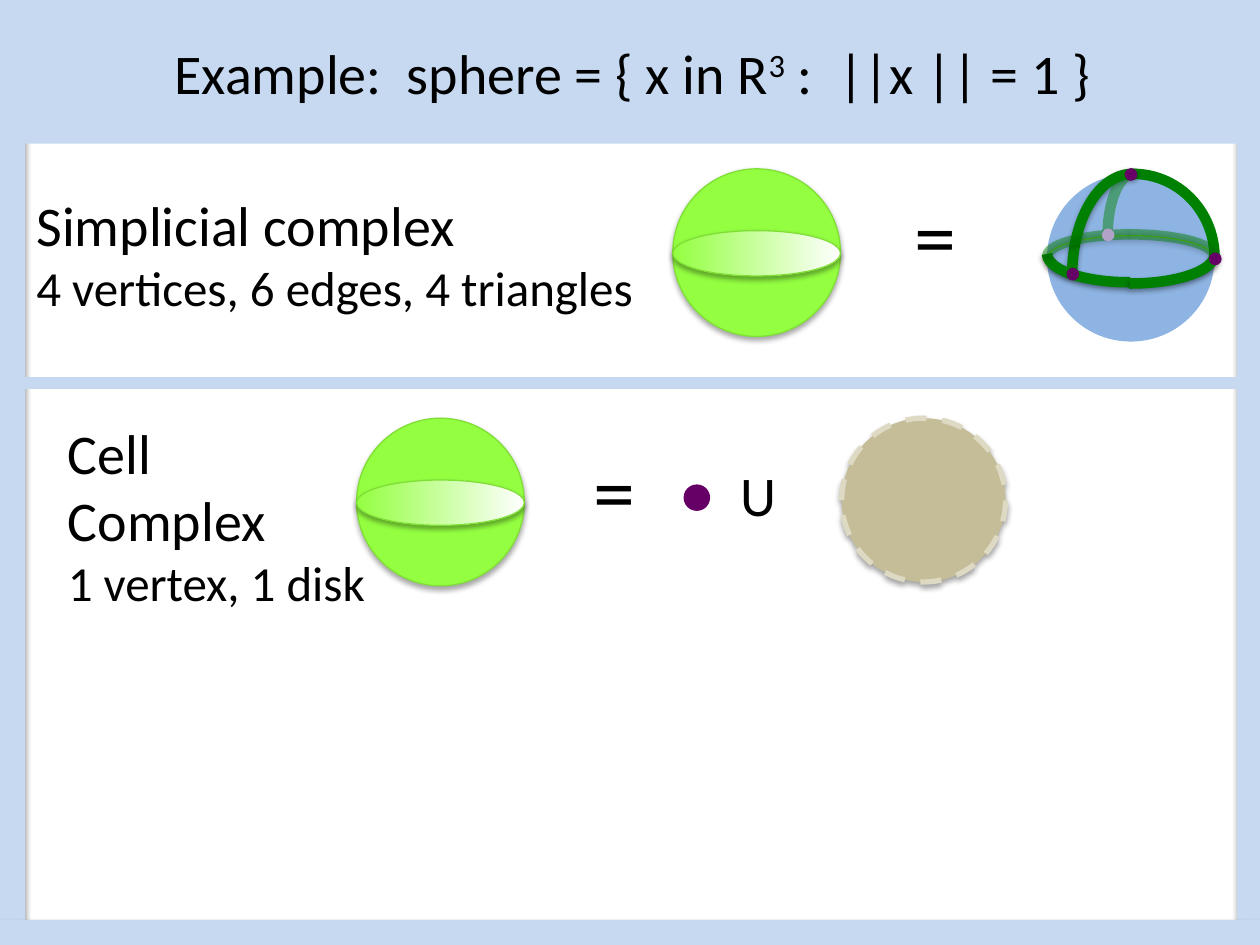
from dataclasses import dataclass

from lxml.etree import SubElement
from pptx import Presentation
from pptx.dml.color import RGBColor
from pptx.enum.dml import MSO_LINE_DASH_STYLE as Dash
from pptx.enum.shapes import MSO_CONNECTOR as Connector, MSO_SHAPE as Preset
from pptx.enum.text import MSO_ANCHOR as Anchor, MSO_AUTO_SIZE as AutoSize, PP_ALIGN as Align
from pptx.oxml.ns import qn
from pptx.util import Pt

COLORS = {
    "frame": "C6D9F1", "text": "000000", "sphere": "94FF41", "rim": "80DF36",
    "white": "FFFFFF", "ball": "8EB4E3", "edge": "008000", "vertex": "660066",
    "hidden_vertex": "B3A2C7", "disk": "C4BD97", "disk_rim": "DDD9C3",
}
SPHERE = 95.8
BAND_TOP, BAND_HEIGHT = 35.3, 25.9
VERTEX = 6.5
QUARTER_START = 160.518  # arc start just before the top, ending at the right


@dataclass(frozen=True)
class Box:
    left: float
    top: float
    width: float
    height: float


@dataclass(frozen=True)
class Edge:
    box: Box
    flip: str = ""
    rotation: int = 0
    hidden: bool = False
    shadow: int = 0


@dataclass(frozen=True)
class Vertex:
    left: float
    top: float
    color: str = "vertex"
    size: float = VERTEX


@dataclass(frozen=True)
class Label:
    box: Box
    lines: tuple[tuple[str, int], ...]


FRAME = (
    (Box(0, 0, 14.4, 540), 35), (Box(707, 0, 14.4, 540), 35),
    (Box(1.4, 0, 720.7, 14.4), 0), (Box(-0.7, 525.6, 720.7, 14.4), 35),
)
EDGES = (
    Edge(Box(601.2, 99.4, 92.9, SPHERE)),
    Edge(Box(612.7, 99.4, 68.4, 115.2), "h", shadow=38),
    Edge(Box(632.9, 99.4, 29.5, 71.3), "h", hidden=True),
    Edge(Box(598.3, 128.9, 93.6, 32.4), "", 180, shadow=38),
    Edge(Box(598.3, 128.9, SPHERE, 33.1), "h", 180, shadow=38),
    Edge(Box(598.3, 133.9, 93.6, 25.2), "v", 180, True, 38),
    Edge(Box(598.3, 133.9, SPHERE, 25.2), "hv", 180, True, 38),
)
VERTICES = (
    Vertex(643, 96.5), Vertex(630, 131, "hidden_vertex"),
    Vertex(609.8, 153.4), Vertex(691.2, 144.7),
)
LABELS = (
    Label(Box(13.7, 105.1, 363.6, 79.9),
          (("Simplicial complex", 32), ("4 vertices, 6 edges, 4 triangles", 28))),
    Label(Box(31.7, 235.4, 255.6, 118.8),
          (("Cell", 32), ("Complex", 32), ("1 vertex, 1 disk", 28))),
    Label(Box(515.5, 101.5, 43.2, 65.5), (("=", 48),)),
    Label(Box(416.2, 259.9, 226.1, 46.1), (("U", 32),)),
    Label(Box(331.9, 247, 88.6, 65.5), (("=", 48),)),
)


def rgb(name: str) -> RGBColor:
    return RGBColor.from_string(COLORS[name])


def place(box: Box) -> tuple[Pt, ...]:
    return tuple(Pt(length) for length in (box.left, box.top, box.width, box.height))


def add_shadow(shape, opacity: int, distance: float = 1.8) -> None:
    """Cast a soft black shadow straight down."""
    effects = shape._element.spPr.find(qn("a:effectLst"))
    outer = SubElement(effects, qn("a:outerShdw"), blurRad=str(Pt(3.1)), dist=str(Pt(distance)),
                       dir="5400000", rotWithShape="0")
    color = SubElement(outer, qn("a:srgbClr"), val=COLORS["text"])
    SubElement(color, qn("a:alpha"), val=str(opacity * 1000))


def draw_shape(shapes, preset: Preset, box: Box, fill: str = "", line: str = "",
               weight: float = 0.75, shadow: int = 0):
    shape = shapes.add_shape(preset, *place(box))
    shape.shadow.inherit = False
    if fill:
        shape.fill.solid()
        shape.fill.fore_color.rgb = rgb(fill)
    else:
        shape.fill.background()
    if line:
        shape.line.color.rgb = rgb(line)
        shape.line.width = Pt(weight)
    else:
        shape.line.fill.background()
    if shadow:
        add_shadow(shape, shadow)
    return shape


def add_run(para, text: str, size: int):
    span = para.add_run()
    span.text = text
    span.font.size = Pt(size)
    span.font.name = "Calibri"
    span.font.color.rgb = rgb("text")
    return span


def draw_label(shapes, label: Label) -> None:
    frame = shapes.add_textbox(*place(label.box)).text_frame
    frame.word_wrap = True
    frame.auto_size = AutoSize.SHAPE_TO_FIT_TEXT
    for index, (text, size) in enumerate(label.lines):
        para = frame.add_paragraph() if index else frame.paragraphs[0]
        add_run(para, text, size)


def draw_title(shapes) -> None:
    banner = draw_shape(shapes, Preset.RECTANGLE, Box(1.4, 0, 720, 82.1), "frame")
    frame = banner.text_frame
    frame.word_wrap = True
    frame.vertical_anchor = Anchor.MIDDLE
    para = frame.paragraphs[0]
    para.alignment = Align.CENTER
    add_run(para, "Example:  sphere = { x in R", 32)
    exponent = add_run(para, "3", 32)
    exponent._r.get_or_add_rPr().set("baseline", "30000")
    add_run(para, " :  ||x || = 1 }", 32)


def draw_divider(shapes) -> None:
    divider = shapes.add_connector(Connector.STRAIGHT, Pt(10.8), Pt(218.9), Pt(716.4), Pt(218.9))
    divider.line.color.rgb = rgb("frame")
    divider.line.width = Pt(7)
    SubElement(divider._element.spPr, qn("a:effectLst"))


def draw_sphere(shapes, left: float, top: float) -> None:
    group = shapes.add_group_shape().shapes
    draw_shape(group, Preset.OVAL, Box(left, top, SPHERE, SPHERE), "sphere", "rim", shadow=35)
    band = draw_shape(group, Preset.OVAL, Box(left, top + BAND_TOP, SPHERE, BAND_HEIGHT),
                      "sphere", "rim", shadow=35)
    band.fill.gradient()
    band.fill.gradient_angle = 0
    for stop, color, position in zip(band.fill.gradient_stops, ("sphere", "white"), (0, 1)):
        stop.color.rgb = rgb(color)
        stop.position = position


def draw_vertex(shapes, vertex: Vertex) -> None:
    draw_shape(shapes, Preset.OVAL, Box(vertex.left, vertex.top, vertex.size, vertex.size),
               vertex.color, vertex.color)


def draw_edge(shapes, edge: Edge) -> None:
    """Draw a quarter arc, translucent when it lies behind the ball."""
    arc = draw_shape(shapes, Preset.ARC, edge.box, line="edge", weight=6)
    arc.adjustments[0] = QUARTER_START
    arc.adjustments[1] = 0
    arc.rotation = edge.rotation
    for axis in edge.flip:
        arc._element.spPr.xfrm.set(f"flip{axis.upper()}", "1")
    if edge.hidden:
        color = arc._element.spPr.find(f"{qn('a:ln')}/{qn('a:solidFill')}/{qn('a:srgbClr')}")
        SubElement(color, qn("a:alpha"), val="45000")
    if edge.shadow:
        add_shadow(arc, edge.shadow, 1.6)


def draw_triangulation(shapes) -> None:
    group = shapes.add_group_shape().shapes
    left, top = 598.3, 99.4
    draw_shape(group, Preset.OVAL, Box(left, top, SPHERE, SPHERE), "ball")
    draw_shape(group, Preset.OVAL, Box(left, top + BAND_TOP, SPHERE, BAND_HEIGHT),
               "ball", "rim", shadow=35)
    for edge in EDGES:
        draw_edge(group, edge)
    for vertex in VERTICES:
        draw_vertex(group, vertex)


def main() -> None:
    deck = Presentation()
    deck.slide_width, deck.slide_height = Pt(720), Pt(540)
    shapes = deck.slides.add_slide(deck.slide_layouts[6]).shapes
    border = shapes.add_group_shape().shapes
    for box, shadow in FRAME:
        draw_shape(border, Preset.RECTANGLE, box, "frame", shadow=shadow)
    draw_title(shapes)
    draw_divider(shapes)
    draw_triangulation(shapes)
    for label in LABELS:
        draw_label(shapes, label)
    draw_sphere(shapes, 384.5, 96.5)
    draw_sphere(shapes, 203.8, 239)
    draw_vertex(shapes, Vertex(391, 277.2, size=14.4))
    disk = draw_shape(shapes, Preset.OVAL, Box(481, 239, 93.6, 93.6), "disk", "disk_rim", 3, 35)
    disk.line.dash_style = Dash.DASH
    deck.save("out.pptx")


if __name__ == "__main__":
    main()
